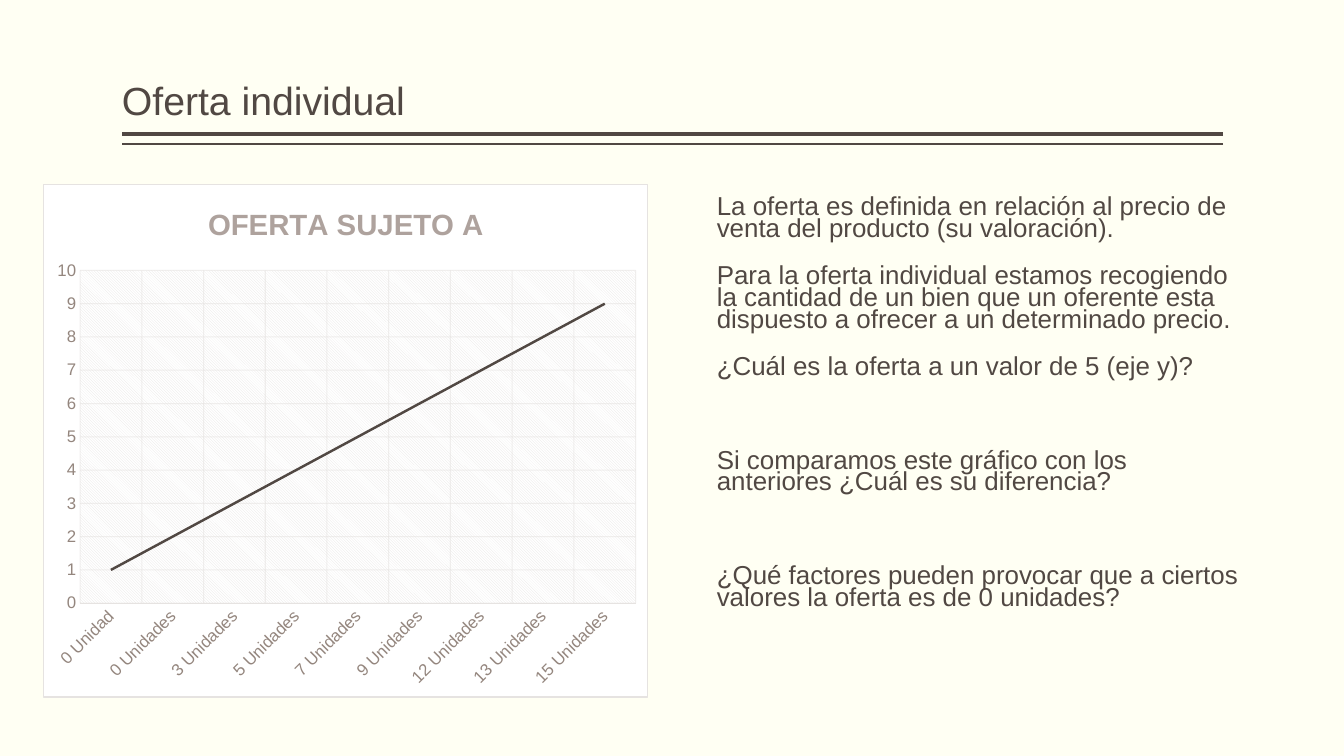
from pptx import Presentation
from pptx.chart.data import CategoryChartData
from pptx.dml.color import RGBColor
from pptx.enum.chart import XL_CHART_TYPE, XL_TICK_MARK
from pptx.enum.shapes import MSO_CONNECTOR
from pptx.enum.text import MSO_ANCHOR
from pptx.oxml import parse_xml
from pptx.oxml.ns import nsdecls, qn
from pptx.util import Inches, Pt

LINE_CHART = XL_CHART_TYPE.LINE
NO_TICK = XL_TICK_MARK.NONE
STRAIGHT = MSO_CONNECTOR.STRAIGHT
BOTTOM, TOP = MSO_ANCHOR.BOTTOM, MSO_ANCHOR.TOP

CREAM = RGBColor(0xFF, 0xFF, 0xF3)
BROWN = RGBColor(0x51, 0x48, 0x43)
LABEL_BROWN = RGBColor(0x94, 0x86, 0x7E)
TITLE_BROWN = RGBColor(0xAE, 0xA2, 0x9D)
PALE = RGBColor(0xE6, 0xE3, 0xE1)
WHITE = RGBColor(0xFF, 0xFF, 0xFF)
FONT = "Arial"

UNITS = ["0 Unidad"] + [f"{n} Unidades" for n in (0, 3, 5, 7, 9, 12, 13, 15)]
PRICES = range(1, 10)

# Text and space before, in points
EXPLANATION = [
    ("La oferta es definida en relación al precio de venta del producto "
     "(su valoración).", 18),
    ("Para la oferta individual estamos recogiendo la cantidad de un bien que "
     "un oferente esta dispuesto a ofrecer a un determinado precio.", 18),
    ("¿Cuál es la oferta a un valor de 5 (eje y)?", 18),
    ("Si comparamos este gráfico con los anteriores ¿Cuál es su diferencia?", 51.5),
    ("¿Qué factores pueden provocar que a ciertos valores la oferta es de "
     "0 unidades?", 51.5),
]


def set_font(font, size, color, bold=False):
    font.name, font.size, font.bold = FONT, Pt(size), bold
    font.color.rgb = color


def add_text(slide, box, paragraphs, size, line_spacing, anchor):
    frame = slide.shapes.add_textbox(*map(Inches, box)).text_frame
    frame.word_wrap = True
    frame.vertical_anchor = anchor
    frame.margin_left = frame.margin_right = 0
    for i, (text, space_before) in enumerate(paragraphs):
        paragraph = frame.paragraphs[0] if i == 0 else frame.add_paragraph()
        paragraph.text = text
        paragraph.line_spacing = line_spacing
        paragraph.space_before = Pt(space_before)
        set_font(paragraph.font, size, BROWN)


def add_header(slide, left, top, width, height):
    add_text(slide, (left, top, width, height), [("Oferta individual", 0)],
             28, 0.9, BOTTOM)
    # Double rule below the title
    for gap, weight in ((0.05, 3), (0.15, 1)):
        y = Inches(top + height + gap)
        rule = slide.shapes.add_connector(
            STRAIGHT, Inches(left + width), y, Inches(left), y)
        rule.line.color.rgb = BROWN
        rule.line.width = Pt(weight)
        rule._element.spPr.append(parse_xml(f"<a:effectLst {nsdecls('a')}/>"))


def area_format(fill, border):
    return parse_xml(f"<c:spPr {nsdecls('c', 'a')}>{fill}{border}</c:spPr>")


def solid(color):
    return f'<a:solidFill><a:srgbClr val="{color}"/></a:solidFill>'


def style_axis(axis):
    axis.major_tick_mark = axis.minor_tick_mark = NO_TICK
    set_font(axis.tick_labels.font, 12, LABEL_BROWN)
    axis.has_major_gridlines = True
    grid = axis.major_gridlines.format.line
    grid.color.rgb = PALE
    grid.width = Pt(0.75)
    for color in axis.major_gridlines._xAx.majorGridlines.iter(qn("a:srgbClr")):
        color.append(parse_xml(f'<a:alpha {nsdecls("a")} val="54000"/>'))


def add_supply_chart(slide, left, top, width, height):
    data = CategoryChartData()
    data.categories = UNITS
    data.add_series("Series 1", PRICES)
    chart = slide.shapes.add_chart(
        LINE_CHART, *map(Inches, (left, top, width, height)), data).chart
    set_font(chart.font, 10, BROWN)
    chart.has_legend = False

    # Title
    chart.has_title = True
    heading = chart.chart_title.text_frame.paragraphs[0]
    heading.text = "OFERTA SUJETO A"
    set_font(heading.font, 21, TITLE_BROWN, bold=True)

    # Axes
    units, price = chart.category_axis, chart.value_axis
    for axis in (units, price):
        style_axis(axis)
    units.format.line.color.rgb = PALE
    units.format.line.width = Pt(0.75)
    units._element.find(qn("c:txPr")).find(qn("a:bodyPr")).set("rot", "-2700000")
    price.format.line.fill.background()
    price.minimum_scale, price.maximum_scale, price.major_unit = 0, 10, 1

    # Supply line
    chart.plots[0].vary_by_categories = False
    supply = chart.plots[0].series[0]
    supply.smooth = False
    supply.format.line.color.rgb = BROWN
    supply.format.line.width = Pt(1.75)

    # Plot area position, hatched plot fill and white bordered card
    plot_area = chart._chartSpace.chart.plotArea
    for layout in plot_area.findall(qn("c:layout")):
        plot_area.remove(layout)
    bounds = "".join(f'<c:{key} val="{value}"/>' for key, value in (
        ("layoutTarget", "inner"), ("xMode", "edge"), ("yMode", "edge"),
        ("x", 0.06), ("y", 0.167), ("w", 0.92), ("h", 0.65)))
    plot_area.insert(0, parse_xml(
        f"<c:layout {nsdecls('c')}><c:manualLayout>{bounds}</c:manualLayout></c:layout>"))
    hatch = (f'<a:pattFill prst="ltDnDiag"><a:fgClr><a:srgbClr val="{PALE}"/></a:fgClr>'
             f'<a:bgClr><a:srgbClr val="{WHITE}"/></a:bgClr></a:pattFill>')
    plot_area.append(area_format(hatch, "<a:ln><a:noFill/></a:ln>"))
    chart._chartSpace.chart.addnext(
        area_format(solid(WHITE), f'<a:ln w="9525">{solid(PALE)}</a:ln>'))


def main():
    deck = Presentation()
    deck.slide_width, deck.slide_height = Inches(13.33), Inches(7.5)
    slide = deck.slides.add_slide(deck.slide_layouts[6])
    slide.background.fill.solid()
    slide.background.fill.fore_color.rgb = CREAM
    add_header(slide, 1.21, 0.08, 10.92, 1.2)
    add_supply_chart(slide, 0.43, 1.83, 6, 5.09)
    add_text(slide, (7.11, 1.92, 5.26, 5), EXPLANATION, 18.5, 0.7, TOP)
    deck.save("out.pptx")


if __name__ == "__main__":
    main()
